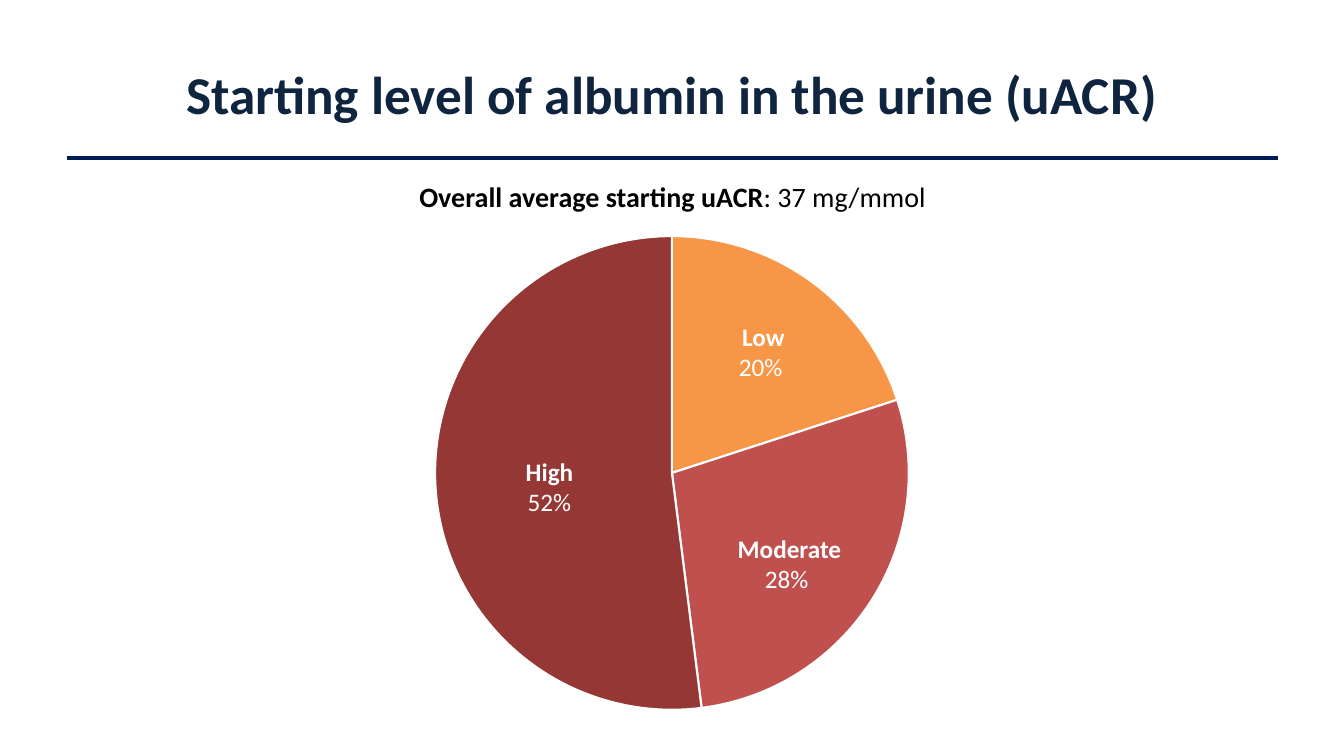
"""Build the slide on starting urine albumin levels, with a pie of three groups."""
from dataclasses import dataclass

from lxml import etree
from pptx import Presentation
from pptx.chart.data import CategoryChartData
from pptx.dml.color import RGBColor
from pptx.enum.chart import XL_CHART_TYPE
from pptx.enum.shapes import MSO_CONNECTOR
from pptx.enum.text import MSO_ANCHOR, MSO_AUTO_SIZE, PP_ALIGN
from pptx.oxml import parse_xml
from pptx.oxml.ns import nsdecls, qn
from pptx.util import Emu, Pt

PIE = XL_CHART_TYPE.PIE
STRAIGHT = MSO_CONNECTOR.STRAIGHT
MIDDLE = MSO_ANCHOR.MIDDLE
NO_FIT = MSO_AUTO_SIZE.NONE
GROW = MSO_AUTO_SIZE.SHAPE_TO_FIT_TEXT
CENTER = PP_ALIGN.CENTER
EMU_PER_PX = 914400 / 100.8


@dataclass(frozen=True)
class Theme:
    font: str = "Calibri"
    title: RGBColor = RGBColor(0x0F, 0x24, 0x3E)
    rule: RGBColor = RGBColor(0x00, 0x1C, 0x54)
    text: RGBColor = RGBColor(0, 0, 0)
    white: RGBColor = RGBColor(0xFF, 0xFF, 0xFF)
    low: RGBColor = RGBColor(0xF7, 0x96, 0x46)
    moderate: RGBColor = RGBColor(0xC0, 0x50, 0x4D)
    high: RGBColor = RGBColor(0x95, 0x37, 0x35)
    title_size: int = 38
    average_size: int = 20
    label_size: int = 18
    chart_size: int = 10


theme = Theme()


def px(*lengths):
    return [Emu(round(length * EMU_PER_PX)) for length in lengths]


def add_text(box, lines, size, color):
    frame = slide.shapes.add_textbox(*px(*box)).text_frame
    frame.word_wrap = True
    frame.auto_size = GROW
    for index, line in enumerate(lines):
        paragraph = frame.paragraphs[0] if index == 0 else frame.add_paragraph()
        paragraph.alignment = CENTER
        for text, bold in line:
            run = paragraph.add_run()
            run.text = text
            run.font.name = theme.font
            run.font.size = Pt(size)
            run.font.bold = bold
            run.font.color.rgb = color


prs = Presentation()
prs.slide_width, prs.slide_height = px(1344, 756)
slide = prs.slides.add_slide(prs.slide_layouts[5])

title = slide.shapes.title
title.left, title.top, title.width, title.height = px(0, 30, 1344, 126)
title.text_frame.text = "Starting level of albumin in the urine (uACR)"
title.text_frame.vertical_anchor = MIDDLE
title.text_frame.auto_size = NO_FIT
heading = title.text_frame.paragraphs[0]
heading.alignment = CENTER
heading_font = heading.runs[0].font
heading_font.name = theme.font
heading_font.size = Pt(theme.title_size)
heading_font.bold = True
heading_font.color.rgb = theme.title

title_rule = slide.shapes.add_connector(STRAIGHT, *px(67, 158, 1278, 158))
title_rule.line.color.rgb = theme.rule
title_rule.line.width = Pt(2.25)
etree.SubElement(title_rule._element.spPr, qn("a:effectLst"))

average = [("Overall average starting uACR", True), (": 37 mg/mmol", False)]
add_text((200, 175, 945, 44), [average], theme.average_size, theme.text)

groups = [
    ("Low", 20, "20% ", theme.low, 656, 316),
    ("Moderate", 28, "28% ", theme.moderate, 682, 528),
    ("High", 52, "52%", theme.high, 442, 451),
]
uacr_data = CategoryChartData()
uacr_data.categories = ["1", "2", "3"]
uacr_data.add_series("Series 1", [group[1] for group in groups])
chart = slide.shapes.add_chart(PIE, *px(420, 194, 504, 558), uacr_data).chart
chart.has_title = False
chart.has_legend = False
chart.font.name = theme.font
chart.font.size = Pt(theme.chart_size)
chart.font.color.rgb = theme.text

plot_area = chart._chartSpace.chart.plotArea
for old_layout in plot_area.findall(qn("c:layout")):
    plot_area.remove(old_layout)
plot_area.insert(0, parse_xml(
    f'<c:layout {nsdecls("c")}><c:manualLayout><c:layoutTarget val="inner"/>'
    '<c:xMode val="edge"/><c:yMode val="edge"/><c:x val="0.03"/><c:y val="0.075"/>'
    '<c:w val="0.94"/><c:h val="0.85"/></c:manualLayout></c:layout>'))

plot = chart.plots[0]
plot.vary_by_categories = True
for index, (level, value, share, color, left, top) in enumerate(groups):
    slice_format = plot.series[0].points[index].format
    slice_format.fill.solid()
    slice_format.fill.fore_color.rgb = color
    slice_format.line.color.rgb = theme.white
    slice_format.line.width = Pt(1.5)
    add_text((left, top, 215, 72), [[(level, True)], [(share, False)]],
             theme.label_size, theme.white)

prs.save("out.pptx")
